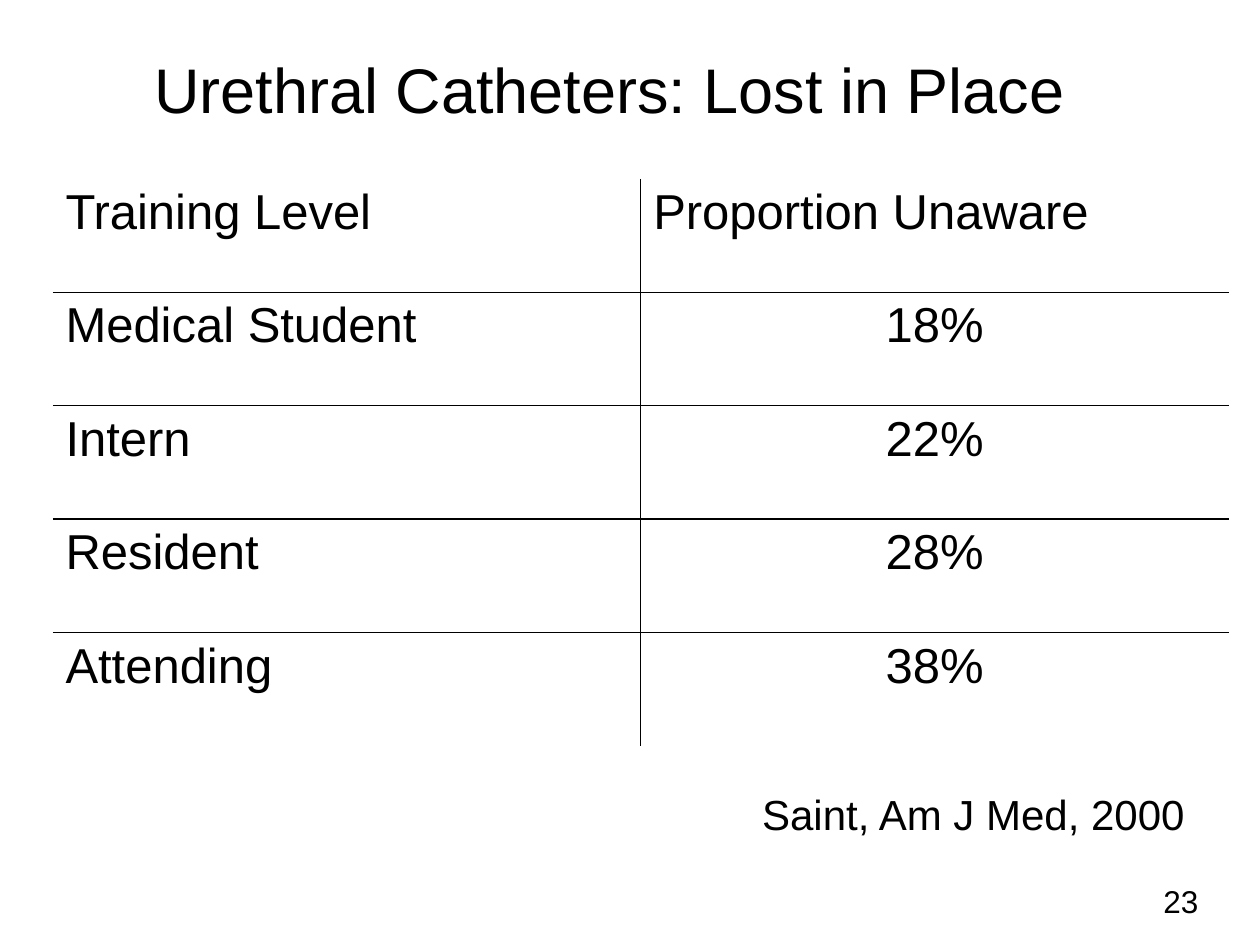
from lxml import etree
from pptx import Presentation
from pptx import util as u
from pptx.dml.color import RGBColor
from pptx.enum import text
from pptx.oxml.ns import qn

WIDTH, HEIGHT = 10, 7.5
FONT, INK = "Arial", "000000"
NO_STYLE = "{2D5ABB26-0587-4C30-8999-92F81FD0307C}"
ROWS = [
    ("Training Level", "Proportion Unaware"),
    ("Medical Student", "18%"),
    ("Intern", "22%"),
    ("Resident", "28%"),
    ("Attending", "38%"),
]


def colour(code):
    return RGBColor.from_string(code)


def write(frame, words, size, align=text.PP_ALIGN.LEFT):
    para = frame.paragraphs[0]
    para.text = words
    para.alignment = align
    para.font.size = u.Pt(size)
    para.font.name = FONT
    para.font.color.rgb = colour(INK)


def add_text(page, area, words, size, align=text.PP_ALIGN.LEFT,
             anchor=text.MSO_ANCHOR.TOP, wrap=True):
    box = page.shapes.add_textbox(*map(u.Inches, area))
    frame = box.text_frame
    frame.word_wrap = wrap
    frame.vertical_anchor = anchor
    write(frame, words, size, align)
    return frame


def add_title(page, area):
    frame = add_text(page, area, "Urethral Catheters: Lost in Place", 36,
                     text.PP_ALIGN.CENTER)
    frame.margin_top = u.Inches(0.1)
    frame.margin_right = u.Inches(0.42)


def set_borders(cell, visible):
    """Draw a 1 pt line on each side named in visible, none on the others."""
    props = cell._tc.get_or_add_tcPr()
    for side in "LRTB":
        line = etree.SubElement(props, qn(f"a:ln{side}"), w=str(u.Pt(1)))
        if side in visible:
            fill = etree.SubElement(line, qn("a:solidFill"))
            etree.SubElement(fill, qn("a:srgbClr"), val=INK)
        else:
            etree.SubElement(line, qn("a:noFill"))


def add_awareness_table(page, area):
    count = len(ROWS)
    frame = page.shapes.add_table(count, 2, *map(u.Inches, area))
    table = frame.table
    table.horz_banding = table.first_row = False
    frame._element.find(".//" + qn("a:tableStyleId")).text = NO_STYLE
    for r, row in enumerate(ROWS):
        for c, words in enumerate(row):
            cell = table.cell(r, c)
            centred = r > 0 and c == 1
            write(cell.text_frame, words, 28,
                  text.PP_ALIGN.CENTER if centred else text.PP_ALIGN.LEFT)
            inner = "L" if c else "R"
            inner += "T" if r > 0 else ""
            inner += "B" if r < count - 1 else ""
            set_borders(cell, inner)
            cell.fill.background()


def main():
    deck = Presentation()
    deck.slide_width, deck.slide_height = u.Inches(WIDTH), u.Inches(HEIGHT)
    page = deck.slides.add_slide(deck.slide_layouts[6])
    add_title(page, (0.05 * WIDTH, 0.04 * HEIGHT, 0.9 * WIDTH, 1.25))
    add_awareness_table(page, (0.42, 1.42, 9.33, 0.6 * HEIGHT))
    add_text(page, (5.95, 6.21, 3.59, 0.51), "Saint, Am J Med, 2000", 24,
             wrap=False)
    add_text(page, (6.78, 6.8, 2.83, 0.7), "23", 18, text.PP_ALIGN.RIGHT,
             text.MSO_ANCHOR.MIDDLE)
    deck.save("out.pptx")


if __name__ == "__main__":
    main()
